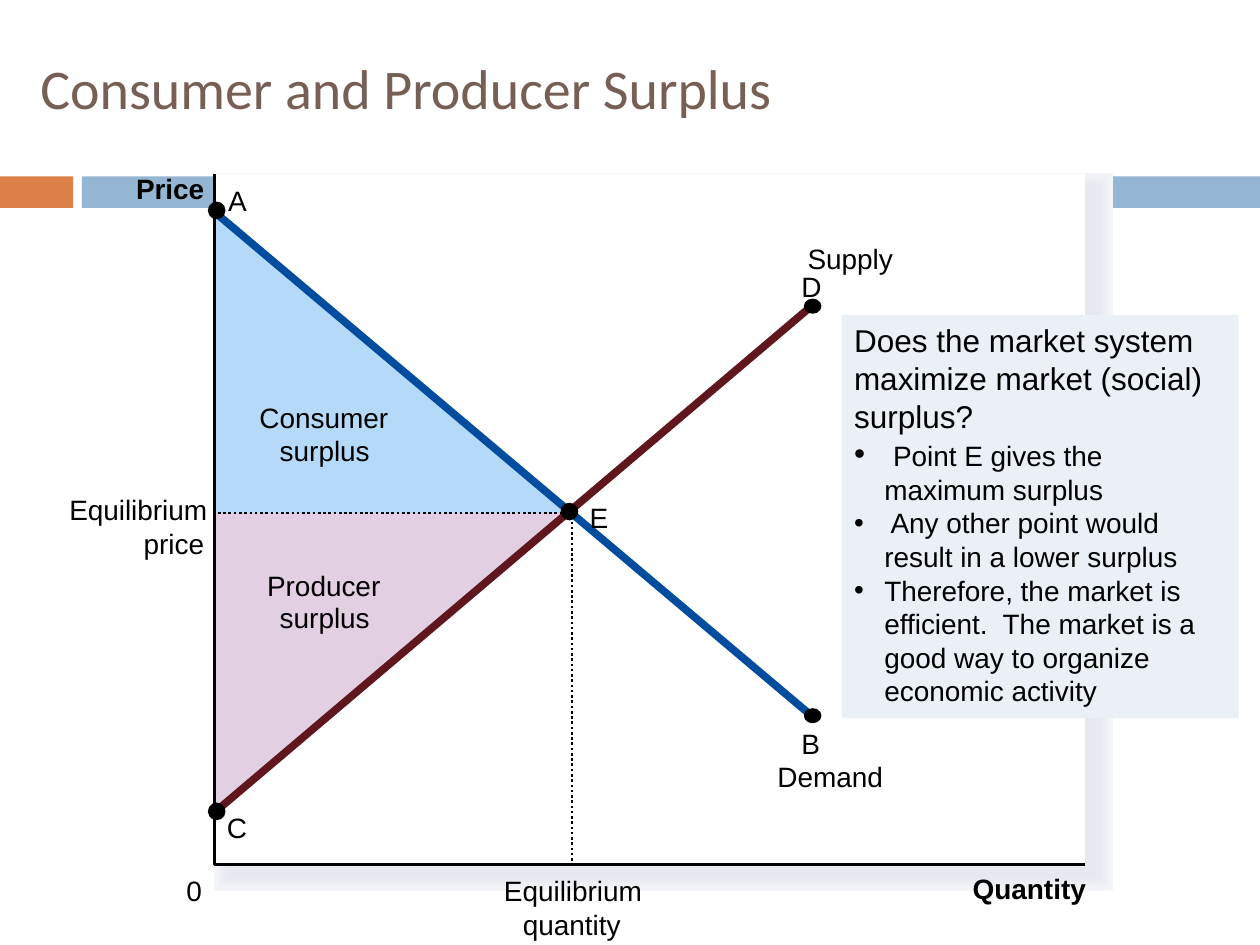
from lxml import etree
from pptx import Presentation
from pptx.dml.color import RGBColor
from pptx.enum.dml import MSO_LINE
from pptx.enum.shapes import MSO_CONNECTOR, MSO_SHAPE
from pptx.enum.text import MSO_ANCHOR, MSO_AUTO_SIZE as AUTO_SIZE, PP_ALIGN
from pptx.oxml.ns import qn
from pptx.util import Inches, Pt

COLORS = {
    "title": "775F55", "orange": "DD8047", "blue": "94B6D2",
    "white": "FFFFFF", "black": "000000", "note": "EAF0F6",
    "consumer": "B4D9F9", "producer": "E2CFE1",
    "supply": "5F161D", "demand": "004C9F",
}
# Shadow shades, from the widest outer edge to the core
SHADOW = ["F3F6F9", "F2F4F8", "F1F4F7", "F0F2F5", "EEF1F4", "EDEFF3",
          "EBEEF2", "EAECF1", "E9EBF0", "E7EAEF", "E6E9EF"]

# Chart geometry in inches
LEFT, TOP, WIDTH, HEIGHT = 1.7, 1.38, 6.91, 5.48
BOTTOM = TOP + HEIGHT
A, B, C, D, E = (LEFT, 1.68), (6.44, 5.68), (LEFT, 6.45), (6.44, 2.43), (4.54, 4.07)
PRICE_POINT = (LEFT, E[1])


def rgb(value):
    return RGBColor.from_string(value)


def style_font(span, size, color="black", name="Arial", bold=False):
    span.font.size = Pt(size)
    span.font.name = name
    span.font.bold = bold
    span.font.color.rgb = rgb(COLORS[color])


def add_block(page, left, top, width, height, fill, line_width=0,
              kind=MSO_SHAPE.RECTANGLE):
    box = page.shapes.add_shape(
        kind, Inches(left), Inches(top), Inches(width), Inches(height))
    box.shadow.inherit = False
    box.fill.solid()
    box.fill.fore_color.rgb = rgb(fill)
    if line_width:
        box.line.color.rgb = rgb(fill)
        box.line.width = Pt(line_width)
        # Square corners
        etree.SubElement(box._element.spPr.find(qn("a:ln")), qn("a:miter"), lim="800000")
    else:
        box.line.fill.background()
    return box


def add_outline(page, points, fill=None, dash=None):
    """Draw a filled area, or an open black line when there is no fill."""
    corners = [(Inches(x), Inches(y)) for x, y in points]
    builder = page.shapes.build_freeform(*corners[0])
    builder.add_line_segments(corners[1:], close=fill is not None)
    outline = builder.convert_to_shape()
    outline.shadow.inherit = False
    if fill:
        outline.fill.solid()
        outline.fill.fore_color.rgb = rgb(COLORS[fill])
        outline.line.fill.background()
    else:
        outline.fill.background()
        outline.line.color.rgb = rgb(COLORS["black"])
        outline.line.width = Pt(1.5)
        outline.line.dash_style = dash


def add_label(page, text, left, top, width, bold=False):
    box = page.shapes.add_textbox(
        Inches(left), Inches(top), Inches(width), Inches(0.3))
    frame = box.text_frame
    frame.margin_left = frame.margin_right = 0
    frame.margin_top = frame.margin_bottom = 0
    frame.word_wrap = False
    frame.auto_size = AUTO_SIZE.SHAPE_TO_FIT_TEXT
    frame.text = text
    style_font(frame.paragraphs[0].runs[0], 16, bold=bold)


def add_curve(page, start, end, color):
    line = page.shapes.add_connector(
        MSO_CONNECTOR.STRAIGHT, *(Inches(value) for value in start + end))
    line.line.color.rgb = rgb(COLORS[color])
    line.line.width = Pt(4.38)
    etree.SubElement(line._element.spPr, qn("a:effectLst"))


def add_point(page, name, left, top, height, label_left, label_top):
    add_block(page, left, top, 0.14, height, COLORS["black"], kind=MSO_SHAPE.OVAL)
    add_label(page, name, label_left, label_top, 0.25)


def add_bullet(para):
    properties = para._p.get_or_add_pPr()
    properties.set("marL", str(Inches(0.24)))
    properties.set("indent", str(-Inches(0.24)))
    etree.SubElement(properties, qn("a:buFont"), typeface="Arial")
    etree.SubElement(properties, qn("a:buChar"), char="•")


def add_title(page, text):
    title = page.shapes.title
    title.left, title.top = Inches(0.22), Inches(0.07)
    title.width, title.height = Inches(9.61), Inches(1.25)
    frame = title.text_frame
    frame.text = text
    frame.vertical_anchor = MSO_ANCHOR.MIDDLE
    frame.paragraphs[0].alignment = PP_ALIGN.LEFT
    style_font(frame.paragraphs[0].runs[0], 32, "title", "Calibri")


def add_note(page, question, answers):
    box = add_block(page, 6.68, 2.5, 3.15, 3.2, COLORS["note"])
    frame = box.text_frame
    frame.word_wrap = True
    frame.auto_size = AUTO_SIZE.SHAPE_TO_FIT_TEXT
    frame.vertical_anchor = MSO_ANCHOR.TOP
    frame.text = question
    para = frame.paragraphs[0]
    para.alignment = PP_ALIGN.LEFT
    style_font(para.runs[0], 18)
    for spans in answers:
        para = frame.add_paragraph()
        para.alignment = PP_ALIGN.LEFT
        add_bullet(para)
        for text, size in spans:
            span = para.add_run()
            span.text = text
            style_font(span, size)


def main():
    deck = Presentation()
    deck.slide_width, deck.slide_height = Inches(10), Inches(7.5)
    page = deck.slides.add_slide(deck.slide_layouts[5])

    # Header
    add_block(page, 0, 1.4, 0.58, 0.25, COLORS["orange"])
    add_block(page, 0.65, 1.4, 9.35, 0.25, COLORS["blue"])
    add_title(page, "Consumer and Producer Surplus")

    # Soft shadow and chart panel
    for step, shade in enumerate(SHADOW):
        add_block(page, LEFT + 0.11, TOP + 0.1, WIDTH, HEIGHT, shade,
                  15.88 - 1.44 * step)
    add_block(page, LEFT, TOP, WIDTH, HEIGHT, COLORS["white"])

    # Surplus areas
    add_outline(page, [E, PRICE_POINT, C], "producer")
    add_outline(page, [E, PRICE_POINT, A], "consumer")

    # Axes and equilibrium guides
    add_outline(page, [(LEFT, TOP), (LEFT, BOTTOM), (LEFT + WIDTH, BOTTOM)])
    add_outline(page, [(1.73, E[1]), E, (E[0], BOTTOM)], dash=MSO_LINE.ROUND_DOT)

    # Supply and demand
    add_curve(page, C, D, "supply")
    add_curve(page, A, B, "demand")

    # Labels
    for label in [
        ("Producer", 2.12, 4.51, 0.97), ("surplus", 2.22, 4.77, 0.81),
        ("Consumer", 2.06, 3.18, 1.1), ("surplus", 2.22, 3.44, 0.81),
        ("Price", 1.08, 1.36, 0.63, True), ("0", 1.48, 6.93, 0.22),
        ("Quantity", 7.72, 6.92, 0.99, True),
        ("Equilibrium", 0.55, 3.91, 1.17), ("price", 1.14, 4.18, 0.57),
        ("Equilibrium", 4, 6.93, 1.17), ("quantity", 4.15, 7.2, 0.84),
        ("Supply", 6.41, 1.92, 0.76), ("Demand", 6.17, 6.03, 0.91),
    ]:
        add_label(page, *label)

    # Marked points
    for point in [
        ("A", 1.65, 1.6, 0.14, 1.81, 1.46), ("C", 1.65, 6.37, 0.14, 1.8, 6.43),
        ("B", 6.38, 5.62, 0.12, 6.36, 5.77), ("D", 6.38, 2.37, 0.12, 6.36, 2.14),
        ("E", 4.45, 3.99, 0.14, 4.68, 3.97),
    ]:
        add_point(page, *point)

    # Discussion note
    add_note(page, "Does the market system maximize market (social) surplus?", [
        [(" ", 18), ("Point E gives the maximum surplus", 16)],
        [(" Any other point would result in a lower surplus", 16)],
        [("Therefore, the market is efficient.  The market is a good way "
          "to organize economic activity", 16)],
    ])
    deck.save("out.pptx")


if __name__ == "__main__":
    main()
